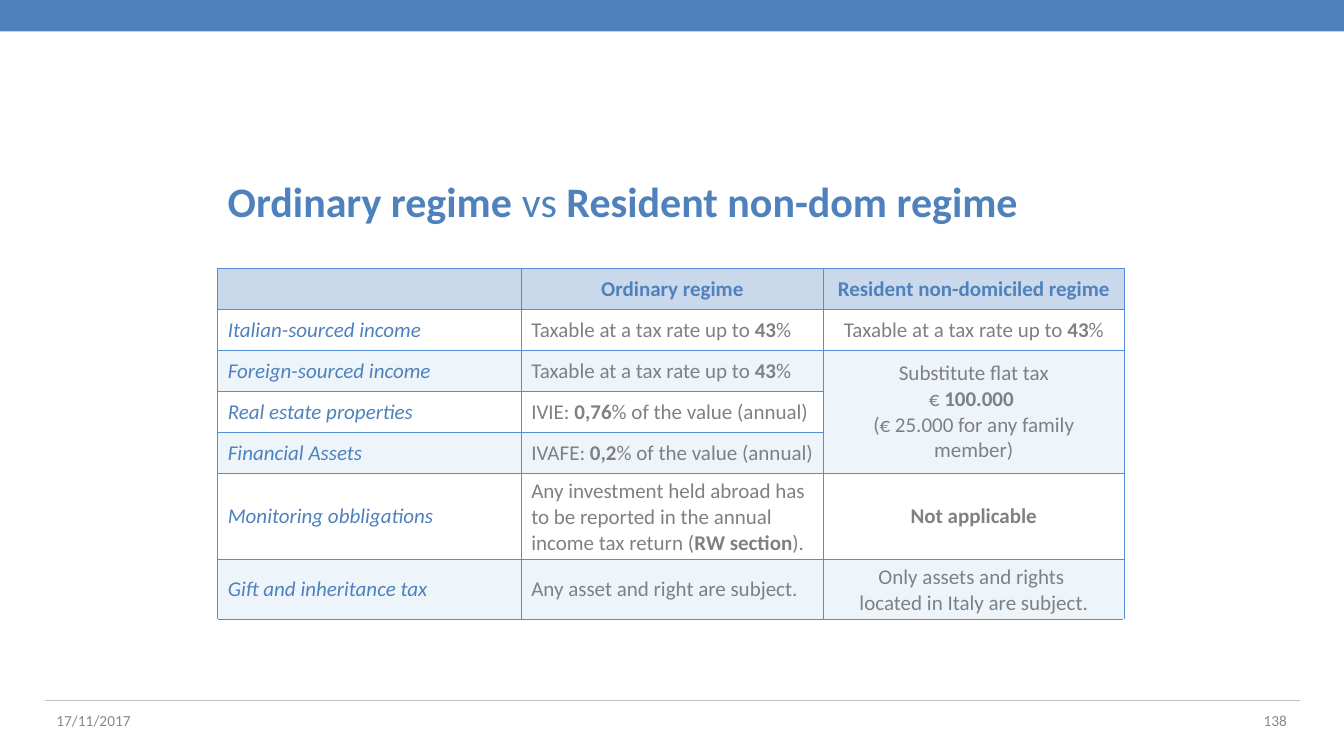
from lxml import etree
from pptx import Presentation
from pptx.dml.color import RGBColor
from pptx.enum.shapes import MSO_CONNECTOR, MSO_SHAPE
from pptx.enum.text import MSO_ANCHOR, PP_ALIGN
from pptx.oxml.ns import qn
from pptx.util import Inches, Pt

LEFT, CENTER, RIGHT = PP_ALIGN.LEFT, PP_ALIGN.CENTER, PP_ALIGN.RIGHT
MIDDLE, TOP = MSO_ANCHOR.MIDDLE, MSO_ANCHOR.TOP
RECT, STRAIGHT = MSO_SHAPE.RECTANGLE, MSO_CONNECTOR.STRAIGHT

WIDE, HIGH = Inches(13.33), Inches(7.5)
FONT = "Calibri"
BLUE, GRAY, PALE = "4F81BD", "808080", "898989"
EDGE, TINT, RULE = "558ED5", "0070C0", "BFBFBF"

# Paired ** marks bold; each cell is a list of paragraphs.
RATE = ["Taxable at a tax rate up to **43**%"]
ROWS = [
    [[], ["**Ordinary regime**"], ["**Resident non-domiciled regime**"]],
    [["Italian-sourced income"], RATE, RATE],
    [["Foreign-sourced income"], RATE,
     ["Substitute flat tax\n€** 100.000 **", "(€ 25.000 for any family member)"]],
    [["Real estate properties"], ["IVIE: **0,76**% of the value (annual)"], []],
    [["Financial Assets"], ["IVAFE: **0,2**% of the value (annual)"], []],
    [["Monitoring obbligations"],
     ["Any investment held abroad has to be reported in the annual "
      "income tax return (**RW section**)."],
     ["**Not applicable**"]],
    [["Gift and inheritance tax"], ["Any asset and right are subject."],
     ["Only assets and rights \nlocated in Italy are subject."]],
    [[], [], []],
]
COLS = [22.58, 22.5, 22.35]
ROW = 5.43


def color(code):
    return RGBColor.from_string(code)


def across(share):
    """Length as a percentage of the slide's width."""
    return round(WIDE * share / 100)


def down(share):
    """Length as a percentage of the slide's height."""
    return round(HIGH * share / 100)


def box(x, y, w, h):
    return across(x), down(y), across(w), down(h)


def write(frame, paras, size, ink, align=LEFT, italic=False):
    for i, text in enumerate(paras):
        para = frame.paragraphs[0] if i == 0 else frame.add_paragraph()
        para.alignment = align
        for j, part in enumerate(text.split("**")):
            for k, line in enumerate(part.split("\n")):
                if k:
                    para.add_line_break()
                if not line:
                    continue
                run = para.add_run()
                run.text = line
                font = run.font
                font.name, font.size = FONT, Pt(size)
                font.bold, font.italic = j % 2 == 1, italic
                font.color.rgb = color(ink)


def label(slide, place, text, size, ink, align=LEFT, anchor=MIDDLE):
    frame = slide.shapes.add_textbox(*box(*place)).text_frame
    frame.word_wrap = True
    frame.vertical_anchor = anchor
    write(frame, [text], size, ink, align)


def band(slide, place, ink):
    shape = slide.shapes.add_shape(RECT, *box(*place))
    shape.shadow.inherit = False
    shape.fill.solid()
    shape.fill.fore_color.rgb = color(ink)
    shape.line.fill.background()


def rule(slide, x1, x2, y, ink):
    line = slide.shapes.add_connector(
        STRAIGHT, across(x1), down(y), across(x2), down(y))
    line.line.color.rgb = color(ink)
    line.line.width = Pt(0.25)
    etree.SubElement(line._element.spPr, qn("a:effectLst"))


def paint(cell, ink, alpha):
    """Fill a cell with a color at the given percentage of opacity."""
    cell.fill.solid()
    cell.fill.fore_color.rgb = color(ink)
    tone = cell._tc.tcPr.find(".//" + qn("a:srgbClr"))
    etree.SubElement(tone, qn("a:alpha"), val=str(alpha * 1000))


def edge(cell, sides):
    props = cell._tc.get_or_add_tcPr()
    for i, side in enumerate(sides):
        line = etree.Element(qn("a:ln" + side), w=str(Pt(0.75)))
        fill = etree.SubElement(line, qn("a:solidFill"))
        etree.SubElement(fill, qn("a:srgbClr"), val=EDGE)
        props.insert(i, line)


def fill_cell(cell, r, c, paras):
    head, last = r == 0, r == len(ROWS) - 1
    cell.vertical_anchor = MIDDLE
    if head:
        paint(cell, BLUE, 30)
    elif r % 2 == 0:
        paint(cell, TINT, 7)
    else:
        cell.fill.background()
    edge(cell, "T" if last else "LRTB")
    write(cell.text_frame, paras, 15,
          BLUE if head or c == 0 else GRAY,
          CENTER if head or c == 2 else LEFT,
          c == 0)


def grid(slide, x, y):
    table = slide.shapes.add_table(
        len(ROWS), len(COLS), *box(x, y, sum(COLS), ROW * len(ROWS))).table
    table.first_row = table.horz_banding = False
    for col, share in zip(table.columns, COLS):
        col.width = across(share)
    for r, row in enumerate(ROWS):
        table.rows[r].height = down(ROW)
        for c, paras in enumerate(row):
            fill_cell(table.cell(r, c), r, c, paras)
    table.cell(2, 2).merge(table.cell(4, 2))
    table.cell(7, 0).merge(table.cell(7, 2))


def main():
    deck = Presentation()
    deck.slide_width, deck.slide_height = WIDE, HIGH
    slide = deck.slides.add_slide(deck.slide_layouts[6])
    band(slide, (0, 0, 100, 4.15), BLUE)
    rule(slide, 3.33, 96.75, 92.6, RULE)
    label(slide, (16.2, 22.5, 70.4, 8.1),
          "**Ordinary regime **vs **Resident non-dom regime**", 30, BLUE,
          anchor=TOP)
    label(slide, (3.45, 92.7, 23.3, 5.3), "17/11/2017", 11, PALE)
    label(slide, (73.2, 92.7, 23.3, 5.3), "138", 11, PALE, RIGHT)
    grid(slide, 16.2, 35.5)
    deck.save("out.pptx")


if __name__ == "__main__":
    main()
